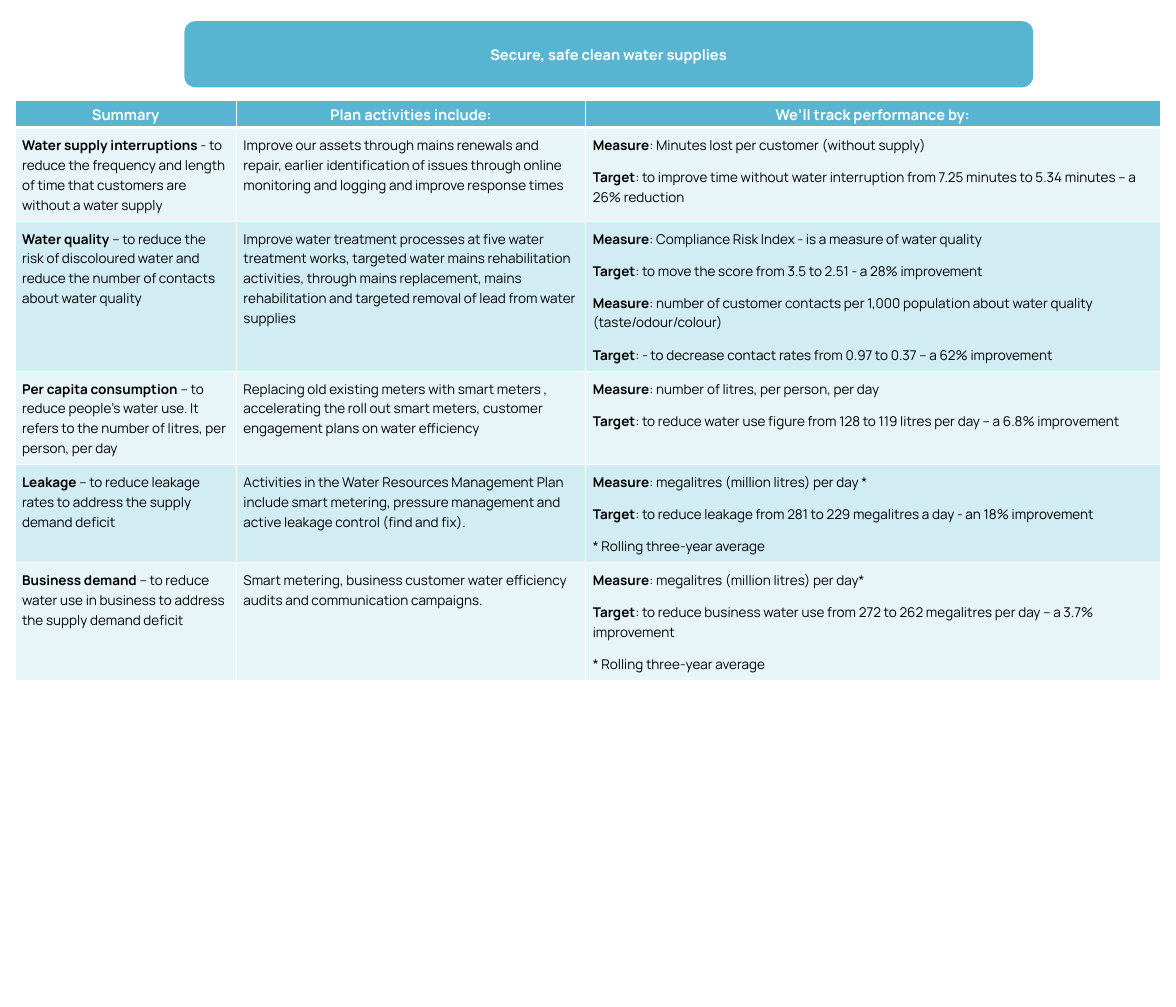
"""Build the slide on secure, safe clean water supplies."""
from lxml import etree
from pptx import Presentation
from pptx.dml.color import RGBColor
from pptx.enum.shapes import MSO_SHAPE
from pptx.enum.text import MSO_ANCHOR, PP_ALIGN
from pptx.oxml.ns import qn
from pptx.util import Inches, Pt

ROUNDED = MSO_SHAPE.ROUNDED_RECTANGLE
CENTER, LEFT = PP_ALIGN.CENTER, PP_ALIGN.LEFT
MIDDLE, TOP = MSO_ANCHOR.MIDDLE, MSO_ANCHOR.TOP
COLORS = {"blue": "58B5D2", "pale": "E7F5F9", "light": "D1ECF3",
          "white": "FFFFFF", "black": "000000"}
COLUMN_WIDTHS = [2.51, 3.96, 6.51]
ROW_HEIGHTS = [0.31, 0.94, 1.55, 0.94, 1.02, 1.21]

# Text before a bar is bold.
ROWS = [
    [["Summary|"], ["Plan activities include:|"], ["We’ll track performance by:|"]],
    [["Water supply interruptions |- to reduce the frequency and length of time that "
      "customers are without a water supply"],
     ["Improve our assets through mains renewals and repair, earlier identification of "
      "issues through online monitoring and logging and improve response times"],
     ["Measure|: Minutes lost per customer (without supply)",
      "Target|: to improve time without water interruption from 7.25 minutes to "
      "5.34 minutes – a 26% reduction"]],
    [["Water quality |– to reduce the risk of discoloured water and reduce the number of "
      "contacts about water quality"],
     ["Improve water treatment processes at five water treatment works, targeted water "
      "mains rehabilitation activities, through mains replacement, mains rehabilitation "
      "and targeted removal of lead from water supplies"],
     ["Measure|: Compliance Risk Index - is a measure of water quality",
      "Target|: to move the score from 3.5 to 2.51 - a 28% improvement",
      "Measure|: number of customer contacts per 1,000 population about water quality "
      "(taste/odour/colour)",
      "Target|: - to decrease contact rates from 0.97 to 0.37 – a 62% improvement"]],
    [["Per capita consumption |– to reduce people’s water use. It refers to the number of "
      "litres, per person, per day"],
     ["Replacing old existing meters with smart meters , accelerating the roll out smart "
      "meters, customer engagement plans on water efficiency"],
     ["Measure|: number of litres, per person, per day",
      "Target|: to reduce water use figure from 128 to 119 litres per day – "
      "a 6.8% improvement"]],
    [["Leakage| – to reduce leakage rates to address the supply demand deficit"],
     ["Activities in the Water Resources Management Plan include smart metering, pressure "
      "management and active leakage control (find and fix)."],
     ["Measure|: megalitres (million litres) per day *",
      "Target|: to reduce leakage from 281 to 229 megalitres a day - an 18% improvement",
      "* Rolling three-year average"]],
    [["Business demand |– to reduce water use in business to address the supply demand "
      "deficit"],
     ["Smart metering, business customer water efficiency audits and communication "
      "campaigns."],
     ["Measure|: megalitres (million litres) per day*",
      "Target|: to reduce business water use from 272 to 262 megalitres per day – "
      "a 3.7% improvement",
      "* Rolling three-year average"]],
]


def write_text(text_frame, texts, size, color, paragraph_format):
    """Fill a text frame with paragraphs whose lead before a bar is bold."""
    for index, text in enumerate(texts):
        paragraph = text_frame.add_paragraph() if index else text_frame.paragraphs[0]
        for name, value in paragraph_format.items():
            setattr(paragraph, name, value)
        lead, _, rest = text.rpartition("|")
        for part, bold in ((lead, True), (rest, False)):
            if part:
                run = paragraph.add_run()
                run.text = part
                run.font.name = "Manrope"
                run.font.size = Pt(size)
                run.font.bold = bold
                run.font.color.rgb = RGBColor.from_string(COLORS[color])


def add_borders(cell, widths):
    """Put white lines on the left, right, top and bottom of a cell."""
    properties = cell._tc.get_or_add_tcPr()
    for index, (side, width) in enumerate(zip("LRTB", widths)):
        line = etree.Element(qn(f"a:ln{side}"), w=str(Pt(width)))
        fill = etree.SubElement(line, qn("a:solidFill"))
        etree.SubElement(fill, qn("a:srgbClr"), val=COLORS["white"])
        properties.insert(index, line)


presentation = Presentation()
presentation.slide_width = Inches(13.33)
presentation.slide_height = Inches(11.42)
slide = presentation.slides.add_slide(presentation.slide_layouts[6])

table = slide.shapes.add_table(
    len(ROW_HEIGHTS), len(COLUMN_WIDTHS), Inches(0.17), Inches(1.14),
    Inches(sum(COLUMN_WIDTHS)), Inches(sum(ROW_HEIGHTS))).table
for column, width in zip(table.columns, COLUMN_WIDTHS):
    column.width = Inches(width)

for row_index, (row_texts, height) in enumerate(zip(ROWS, ROW_HEIGHTS)):
    table.rows[row_index].height = Inches(height)
    is_header = row_index == 0
    fill_color = "blue" if is_header else "pale" if row_index % 2 else "light"
    inset = Inches(0 if is_header else 0.08)
    cell_format = {"margin_left": inset, "margin_right": inset, "margin_top": inset,
                   "margin_bottom": inset, "vertical_anchor": MIDDLE if is_header else TOP}
    for column_index, texts in enumerate(row_texts):
        cell = table.cell(row_index, column_index)
        for name, value in cell_format.items():
            setattr(cell, name, value)
        cell.fill.solid()
        cell.fill.fore_color.rgb = RGBColor.from_string(COLORS[fill_color])
        add_borders(cell, (1, 1, 3 if row_index == 1 else 1, 3 if is_header else 1))
        space_after = 10 if column_index == 2 and not is_header else 8
        write_text(cell.text_frame, texts, 12 if is_header else 11,
                   "white" if is_header else "black",
                   {"alignment": CENTER if is_header else LEFT,
                    "line_spacing": 1.07, "space_after": Pt(space_after)})

banner = slide.shapes.add_shape(ROUNDED, Inches(2.09), Inches(0.24), Inches(9.62), Inches(0.75))
banner.shadow.inherit = False
banner.fill.solid()
banner.fill.fore_color.rgb = RGBColor.from_string(COLORS["blue"])
banner.line.fill.background()
banner.text_frame.vertical_anchor = MIDDLE
write_text(banner.text_frame, ["Secure, safe clean water supplies|"], 12, "white",
           {"alignment": CENTER})

presentation.save("out.pptx")
